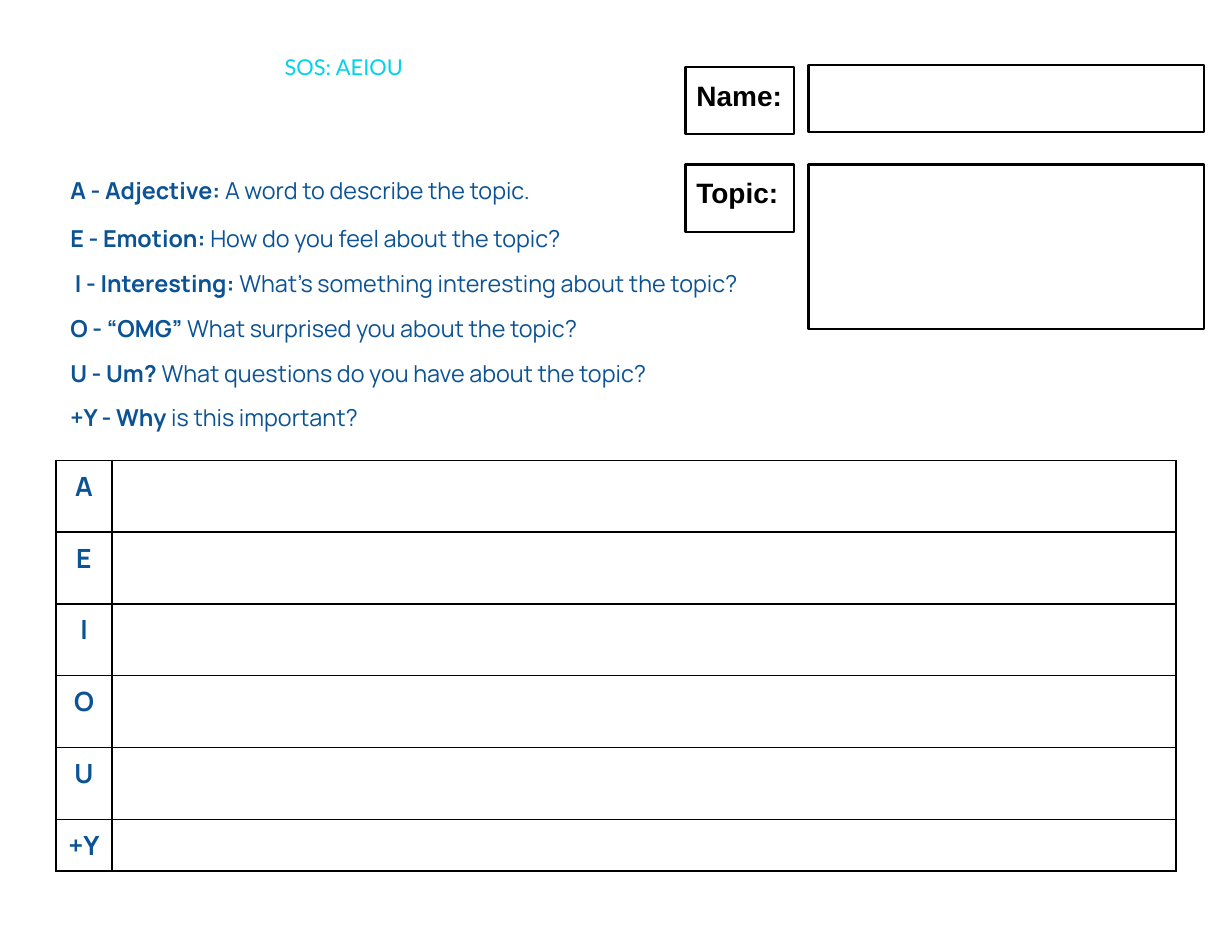
import dataclasses

import pptx
import pptx.dml.color
import pptx.enum.shapes
import pptx.enum.text
import pptx.oxml
import pptx.oxml.ns
import pptx.util

SLIDE_WIDTH = pptx.util.Inches(11)
SLIDE_HEIGHT = pptx.util.Inches(8.5)
GRID_COLUMNS, GRID_ROWS = 110, 85
COLORS = {"title": "00D2E9", "prompt": "0B5394", "ink": "000000"}
LABEL_COLUMN, LABEL_WIDTH, LABEL_HEIGHT = 61.2, 9.7, 6
ANSWER_COLUMN, ANSWER_WIDTH = 72.2, 35.3
TABLE_COLUMNS = (5, 95)
ROW_HEIGHT, LAST_ROW_HEIGHT = 6.41, 4.38


@dataclasses.dataclass(frozen=True)
class Area:
    column: float
    row: float
    columns: float
    rows: float

    def place(self) -> tuple[int, int, int, int]:
        return across(self.column), down(self.row), across(self.columns), down(self.rows)


@dataclasses.dataclass(frozen=True)
class Field:
    area: Area
    label: str = ""


@dataclasses.dataclass(frozen=True)
class Prompt:
    letter: str
    term: str
    question: str
    gap: float = 10.8


FIELDS = (
    Field(Area(LABEL_COLUMN, 6, LABEL_WIDTH, LABEL_HEIGHT), "Name:"),
    Field(Area(ANSWER_COLUMN, 5.8, ANSWER_WIDTH, 6)),
    Field(Area(ANSWER_COLUMN, 14.7, ANSWER_WIDTH, 14.7)),
    Field(Area(LABEL_COLUMN, 14.7, LABEL_WIDTH, LABEL_HEIGHT), "Topic:"),
)
PROMPTS = (
    Prompt("A", "A - Adjective:", " A word to describe the topic.", 0),
    Prompt("E", "E - Emotion: ", "How do you feel about the topic?", 13.2),
    Prompt("I", " I - Interesting: ", "What’s something interesting about the topic?"),
    Prompt("O", "O - “OMG” ", "What surprised you about the topic?"),
    Prompt("U", "U - Um? ", "What questions do you have about the topic?"),
    Prompt("+Y", "+Y - Why", " is this important?"),
)


def across(columns: float) -> int:
    return round(SLIDE_WIDTH * columns / GRID_COLUMNS)


def down(rows: float) -> int:
    return round(SLIDE_HEIGHT * rows / GRID_ROWS)


def rgb(name: str) -> pptx.dml.color.RGBColor:
    return pptx.dml.color.RGBColor.from_string(COLORS[name])


def style(paragraph, family: str, size: float, color: str) -> None:
    paragraph.font.name = family
    paragraph.font.size = pptx.util.Pt(size)
    paragraph.font.color.rgb = rgb(color)


def set_frame(frame, inset: float) -> None:
    frame.word_wrap = True
    frame.auto_size = pptx.enum.text.MSO_AUTO_SIZE.NONE
    frame.vertical_anchor = pptx.enum.text.MSO_ANCHOR.TOP
    frame.margin_left = frame.margin_top = pptx.util.Inches(inset)
    frame.margin_right = frame.margin_bottom = pptx.util.Inches(0.05)


def draw_title(page) -> None:
    title = page.shapes.title
    title.left, title.top, title.width, title.height = Area(5.3, 4.3, 50.8, 9.1).place()
    set_frame(title.text_frame, 0.05)
    paragraph = title.text_frame.paragraphs[0]
    paragraph.text = "SOS: AEIOU"
    paragraph.alignment = pptx.enum.text.PP_ALIGN.CENTER
    style(paragraph, "Lato", 14, "title")


def draw_field(page, field: Field) -> None:
    box = page.shapes.add_shape(
        pptx.enum.shapes.MSO_SHAPE.RECTANGLE, *field.area.place()
    )
    box.shadow.inherit = False
    box.fill.background()
    box.line.color.rgb = rgb("ink")
    box.line.width = pptx.util.Pt(1.5)
    if field.label:
        set_frame(box.text_frame, 0.1)
        paragraph = box.text_frame.paragraphs[0]
        paragraph.text = field.label
        paragraph.alignment = pptx.enum.text.PP_ALIGN.LEFT
        style(paragraph, "Arial", 18, "ink")
        paragraph.font.bold = True


def draw_prompts(page) -> None:
    box = page.shapes.add_textbox(*Area(5.3, 14.7, 76, 25.1).place())
    frame = box.text_frame
    set_frame(frame, 0.1)
    for index, prompt in enumerate(PROMPTS):
        paragraph = frame.add_paragraph() if index else frame.paragraphs[0]
        paragraph.line_spacing = pptx.util.Pt(18)
        if prompt.gap:
            paragraph.space_before = pptx.util.Pt(prompt.gap)
        style(paragraph, "Manrope", 15, "prompt")
        for text, bold in ((prompt.term, True), (prompt.question, False)):
            span = paragraph.add_run()
            span.text = text
            span.font.bold = bold


def add_borders(cell) -> None:
    properties = cell._tc.get_or_add_tcPr()
    for side in ("lnL", "lnR", "lnT", "lnB"):
        properties.append(pptx.oxml.parse_xml(
            f'<a:{side} {pptx.oxml.ns.nsdecls("a")} w="{pptx.util.Pt(1)}">'
            f'<a:solidFill><a:srgbClr val="{COLORS["ink"]}"/></a:solidFill></a:{side}>'
        ))


def draw_table(page) -> None:
    heights = [ROW_HEIGHT] * (len(PROMPTS) - 1) + [LAST_ROW_HEIGHT]
    area = Area(5, 41.1, sum(TABLE_COLUMNS), sum(heights))
    table = page.shapes.add_table(
        len(PROMPTS), len(TABLE_COLUMNS), *area.place()
    ).table
    table.first_row = table.horz_banding = False
    for column, width in zip(table.columns, TABLE_COLUMNS):
        column.width = across(width)
    for row, height, prompt in zip(table.rows, heights, PROMPTS):
        row.height = down(height)
        for cell in row.cells:
            add_borders(cell)
            cell.fill.background()
        letter = row.cells[0]
        letter.margin_left = letter.margin_right = pptx.util.Inches(0.07)
        letter.margin_top = letter.margin_bottom = pptx.util.Inches(0.07)
        paragraph = letter.text_frame.paragraphs[0]
        paragraph.text = prompt.letter
        paragraph.alignment = pptx.enum.text.PP_ALIGN.CENTER
        style(paragraph, "Manrope", 17, "prompt")
        paragraph.font.bold = True


def main() -> None:
    deck = pptx.Presentation()
    deck.slide_width, deck.slide_height = SLIDE_WIDTH, SLIDE_HEIGHT
    page = deck.slides.add_slide(deck.slide_layouts.get_by_name("Title Only"))
    draw_title(page)
    draw_prompts(page)
    draw_table(page)
    for field in FIELDS:
        draw_field(page, field)
    deck.save("out.pptx")


if __name__ == "__main__":
    main()
